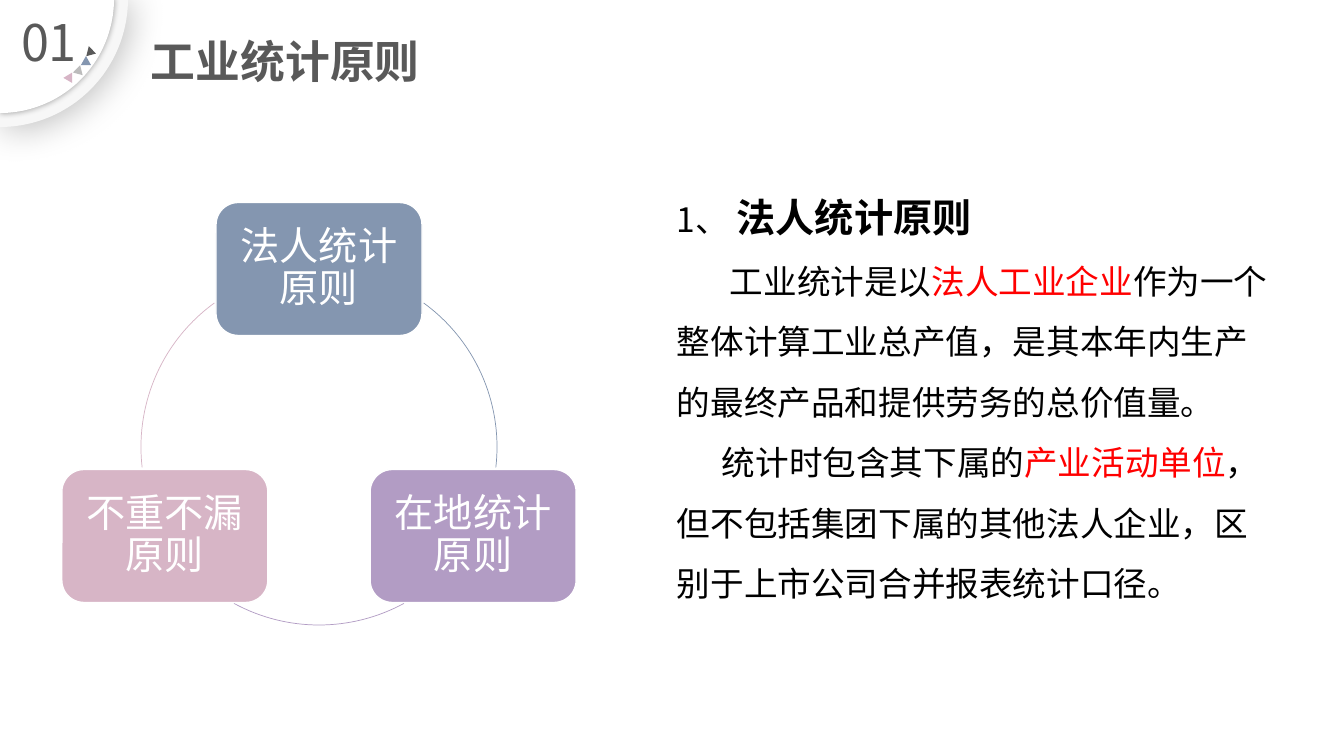
from dataclasses import dataclass
from math import cos, radians, sin

from lxml.etree import SubElement
from pptx import Presentation
from pptx.dml.color import RGBColor
from pptx.enum.shapes import MSO_SHAPE
from pptx.enum.text import MSO_ANCHOR, PP_ALIGN
from pptx.oxml.ns import qn
from pptx.util import Pt

SCALE = 12192000 / 1344


@dataclass(frozen=True)
class Theme:
    font: str = "Noto Sans CJK SC"
    diagram_font: str = "Arial"
    white: str = "FFFFFF"
    rim: str = "F7F7F7"
    shade: str = "000000"
    dark: str = "595959"
    blue: str = "8496B0"
    gray: str = "BCBCBC"
    pink: str = "D7B5C6"
    purple: str = "B29CC4"
    ink: str = "000000"
    accent: str = "FF0000"
    number_size: int = 36
    title_size: int = 32
    heading_size: int = 28
    body_size: int = 24


THEME = Theme()


def px(length):
    return round(length * SCALE)


def paint(shape, color):
    shape.shadow.inherit = False
    shape.fill.solid()
    shape.fill.fore_color.rgb = RGBColor.from_string(color)
    shape.line.fill.background()


def style(span, size, color, bold=False, font=THEME.font):
    span.font.size = Pt(size)
    span.font.bold = bold
    span.font.color.rgb = RGBColor.from_string(color)
    span.font.name = font
    SubElement(span.font._element, qn("a:ea"), typeface=font)


def add_text_box(page, box):
    shape = page.shapes.add_textbox(*map(px, box))
    shape.text_frame.word_wrap = True
    return shape.text_frame


def add_quarter_disc(page, left, top, radius, color, opacity, blur, distance):
    arc = [(left + radius * cos(radians(angle)), top + radius * sin(radians(angle)))
           for angle in range(0, 91, 2)]
    builder = page.shapes.build_freeform(px(left), px(top))
    builder.add_line_segments([(px(x), px(y)) for x, y in arc])
    disc = builder.convert_to_shape()
    paint(disc, color)
    effects = disc._element.spPr.find(qn("a:effectLst"))
    shadow = SubElement(effects, qn("a:outerShdw"), blurRad=str(Pt(blur)),
                        dist=str(Pt(distance)), dir="2700000", algn="tl", rotWithShape="0")
    tint = SubElement(shadow, qn("a:srgbClr"), val=THEME.shade)
    SubElement(tint, qn("a:alpha"), val=str(opacity * 1000))


def add_corner(page, box):
    left, top, width, height = box
    add_quarter_disc(page, left, top, width, THEME.rim, 25, 26, 3)
    add_quarter_disc(page, left, top, width - 14, THEME.white, 40, 5, 0)
    triangles = [(90, 52, THEME.dark), (86, 62, THEME.blue),
                 (79, 71, THEME.gray), (70, 78, THEME.pink)]
    for index, (x, y, color) in enumerate(triangles):
        triangle = page.shapes.add_shape(
            MSO_SHAPE.ISOSCELES_TRIANGLE,
            px(left + x - 5), px(top + y - 5), px(10), px(9))
        triangle.rotation = 15 * (index - 1)
        paint(triangle, color)
    frame = add_text_box(page, (left + 5, top + 7, 88, 72))
    para = frame.paragraphs[0]
    para.text = "01"
    para.alignment = PP_ALIGN.CENTER
    style(para.runs[0], THEME.number_size, THEME.dark)


def add_title(page, box):
    frame = add_text_box(page, box)
    frame.vertical_anchor = MSO_ANCHOR.BOTTOM
    para = frame.paragraphs[0]
    para.text = "工业统计原则"
    para.line_spacing = 0.9
    style(para.runs[0], THEME.title_size, THEME.dark, bold=True)


def add_cycle(page, box):
    left, top, width, height = box
    radius = width / 2
    node_width, node_height = 206, 133
    nodes = [("法人统计原则", THEME.blue, -90, (306, 6.6)),
             ("在地统计原则", THEME.purple, 30, (61.5, 118.5)),
             ("不重不漏原则", THEME.pink, 150, (173.4, 234))]
    for name, color, angle, sweep in nodes:
        arc = page.shapes.add_shape(MSO_SHAPE.ARC, *map(px, box))
        arc.shadow.inherit = False
        for index, degrees in enumerate(sweep):
            arc.adjustments[index] = degrees * 0.6
        arc.fill.background()
        arc.line.color.rgb = RGBColor.from_string(color)
        arc.line.width = Pt(0.5)

        x = left + radius + radius * cos(radians(angle)) - node_width / 2
        y = top + radius + radius * sin(radians(angle)) - node_height / 2
        node = page.shapes.add_shape(MSO_SHAPE.ROUNDED_RECTANGLE,
                                     px(x), px(y), px(node_width), px(node_height))
        paint(node, color)
        node.line.color.rgb = RGBColor.from_string(THEME.white)
        node.line.width = Pt(1)
        frame = node.text_frame
        frame.word_wrap = True
        frame.vertical_anchor = MSO_ANCHOR.MIDDLE
        frame.margin_left = frame.margin_right = px(12)
        frame.margin_top = frame.margin_bottom = px(12)
        para = frame.paragraphs[0]
        para.text = name
        para.alignment = PP_ALIGN.CENTER
        para.line_spacing = 0.9
        style(para.runs[0], THEME.heading_size, THEME.white, font=THEME.diagram_font)


def add_explanation(page, box):
    frame = add_text_box(page, box)
    body, heading = THEME.body_size, THEME.heading_size
    paragraphs = [
        (0, [("1、 ", body, THEME.ink, False),
             ("法人统计原则", heading, THEME.ink, True)]),
        (53, [("工业统计是以", body, THEME.ink, False),
              ("法人工业企业", body, THEME.accent, False),
              ("作为一个整体计算工业总产值，是其本年内生产的最终产品和提供劳务的总价值量。",
               body, THEME.ink, False)]),
        (45, [("统计时包含其下属的", body, THEME.ink, False),
              ("产业活动单位", body, THEME.accent, False),
              ("，但不包括集团下属的其他法人企业，区别于上市公司合并报表统计口径。",
               body, THEME.ink, False)]),
    ]
    for index, (indent, spans) in enumerate(paragraphs):
        para = frame.add_paragraph() if index else frame.paragraphs[0]
        para.line_spacing = 1.5
        para._p.get_or_add_pPr().set("indent", str(px(indent)))
        for text, size, color, bold in spans:
            span = para.add_run()
            span.text = text
            style(span, size, color, bold)


def main():
    deck = Presentation()
    deck.slide_width, deck.slide_height = px(1344), px(756)
    page = deck.slides.add_slide(deck.slide_layouts[6])
    add_corner(page, (0, -1, 128, 128))
    add_title(page, (141, 41, 787, 52))
    add_cycle(page, (141, 269, 356, 356))
    add_explanation(page, (667, 165, 617, 448))
    deck.save("out.pptx")


if __name__ == "__main__":
    main()
